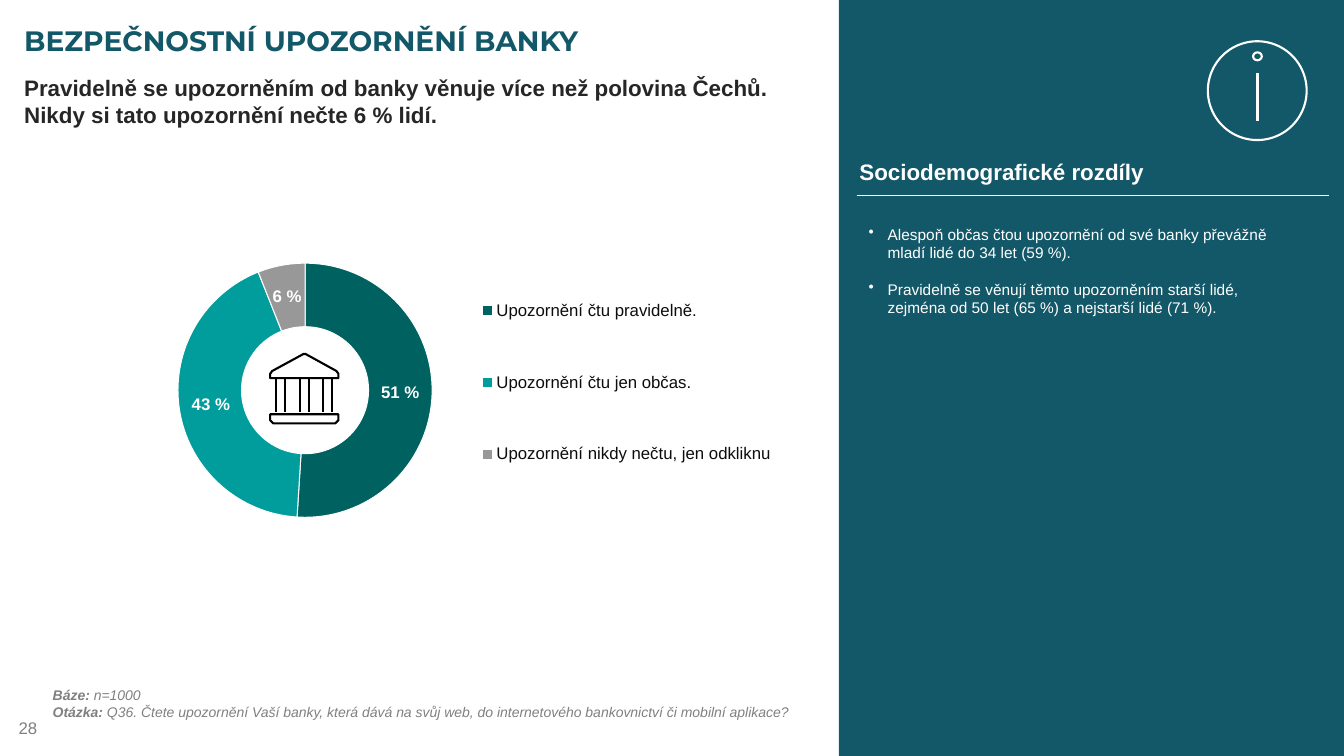
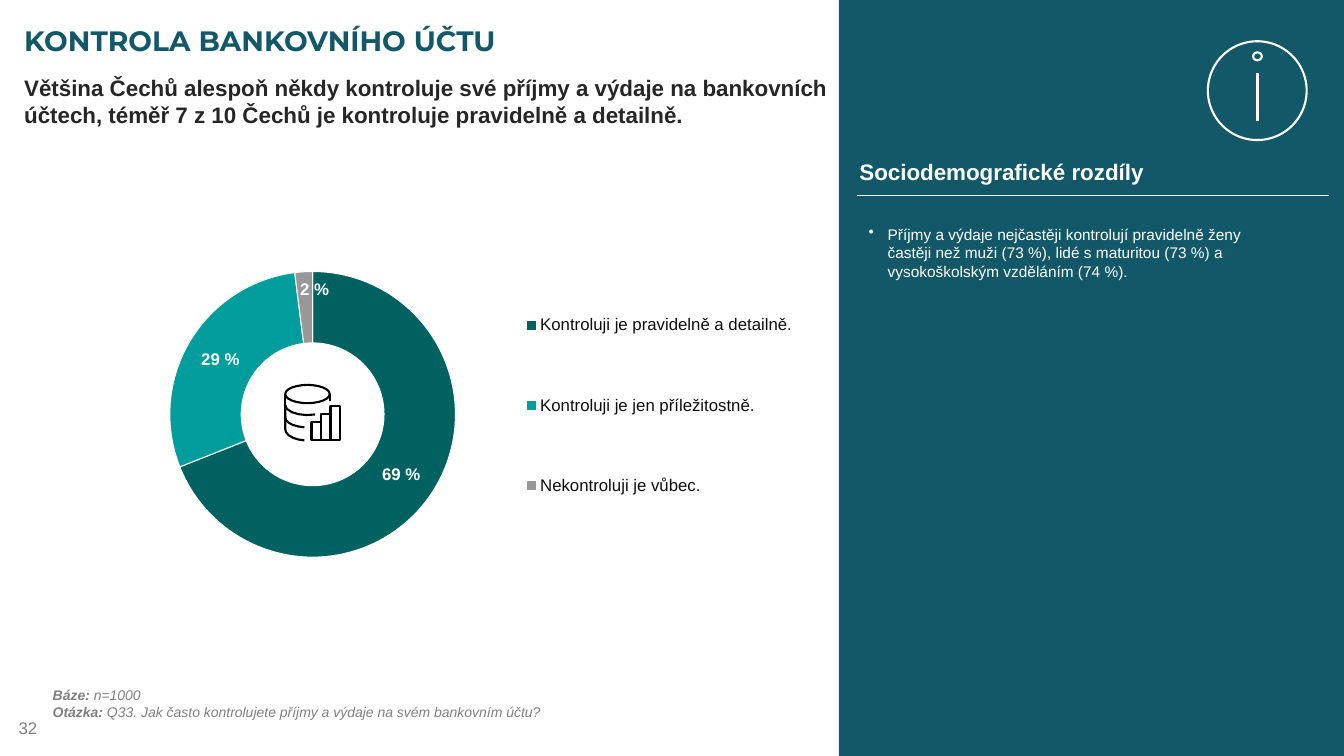
from dataclasses import dataclass
from math import cos, radians, sin
from typing import Callable, NamedTuple

from lxml import etree
from pptx import Presentation
from pptx.chart.data import CategoryChartData
from pptx.dml.color import RGBColor
from pptx.enum import chart as charts, shapes, text
from pptx.oxml import parse_xml
from pptx.oxml.ns import nsdecls, qn
from pptx.util import Cm, Pt

TEAL, WHITE, BLACK = "135868", "FFFFFF", "000000"
INK, LEGEND_INK, GRAY = "262626", "0D0D0D", "808080"
SLICES = ("006260", "009D9C", "7F7F7F")
PERCENT = r'#,##0\ "%";\-#,##0"%"'
ICON_LINE = 1.5
ARC_STEPS = 5


class Box(NamedTuple):
    """Left, top, width and height: centimetres, or shares of a chart."""
    x: float
    y: float
    w: float
    h: float


@dataclass(frozen=True)
class Style:
    size: float
    color: str
    bold: bool | None = None
    italic: bool | None = None
    name: str = "Arial"


TITLE = Style(20, TEAL, bold=True, name="Montserrat")
LEAD = Style(16, INK, bold=True)
HEADING = Style(16, WHITE, bold=True)
BULLET = Style(11, WHITE)
NOTE = Style(10, GRAY, italic=True)
PAGE = Style(12, GRAY)
CHART_LABEL = Style(12, WHITE, bold=True)


@dataclass(frozen=True)
class Survey:
    page: int
    title: str
    lead: str
    question: str
    findings: tuple[str, ...]
    answers: dict[str, int]
    chart: Box
    plot: Box
    legend: Box
    icon: Callable
    last_label_shift: tuple[float, float] | None = None


# Basic drawing
def rgb(color: str) -> RGBColor:
    return RGBColor.from_string(color)


def cm(box: Box) -> list[Cm]:
    return [Cm(v) for v in box]


def set_font(font, style: Style) -> None:
    font.name, font.size = style.name, Pt(style.size)
    font.bold, font.italic = style.bold, style.italic
    font.color.rgb = rgb(style.color)


def outline(sp, color: str) -> None:
    sp.shadow.inherit = False
    sp.fill.background()
    sp.line.color.rgb = rgb(color)
    sp.line.width = Pt(ICON_LINE)


def add_line(parent, x1: float, y1: float, x2: float, y2: float,
             color: str, width: float = ICON_LINE) -> None:
    line = parent.add_connector(shapes.MSO_CONNECTOR.STRAIGHT,
                                Cm(x1), Cm(y1), Cm(x2), Cm(y2))
    line.line.color.rgb = rgb(color)
    line.line.width = Pt(width)
    etree.SubElement(line._element.spPr, qn("a:effectLst"))


def add_outline(parent, kind, box: Box, color: str) -> None:
    outline(parent.add_shape(kind, *cm(box)), color)


def add_path(parent, points: list[tuple[float, float]], close: bool) -> None:
    start, *rest = [(Cm(x), Cm(y)) for x, y in points]
    builder = parent.build_freeform(*start)
    builder.add_line_segments(rest, close=close)
    outline(builder.convert_to_shape(), BLACK)


def add_text(slide, box: Box, lines: tuple[str, ...], style: Style,
             middle: bool = False, wrap: bool = True):
    tf = slide.shapes.add_textbox(*cm(box)).text_frame
    tf.word_wrap = wrap
    if middle:
        tf.vertical_anchor = text.MSO_ANCHOR.MIDDLE
    for i, line in enumerate(lines):
        p = tf.add_paragraph() if i else tf.paragraphs[0]
        p.text = line
        set_font(p.font, style)
    return tf


# Icons
def bank_icon(parent) -> None:
    left, right, top, bottom = 6.81, 8.53, 9.53, 10.39
    add_path(parent, [(right, top), (left, top), (left, 9.42), (6.86, 9.35),
                      (7.65, 8.92), (7.7, 8.92), (8.48, 9.35), (right, 9.42)], True)
    for column in range(3):
        for side in (0, 0.23):
            x = 6.96 + 0.59 * column + side
            add_line(parent, x, top, x, bottom, BLACK)
    add_path(parent, [(left, 10.44), (right, 10.44), (right, 10.59), (8.45, 10.67),
                      (6.89, 10.67), (left, 10.59)], True)


def database_icon(parent) -> None:
    left, radius, base = 7.19, 0.56, 11.1
    for i, height in enumerate((0.46, 0.66, 0.86)):
        bar = Box(7.85 + 0.24 * i, base - height, 0.25, height)
        add_outline(parent, shapes.MSO_SHAPE.RECTANGLE, bar, BLACK)
    add_outline(parent, shapes.MSO_SHAPE.OVAL, Box(left, 9.7, 2 * radius, 0.46), BLACK)
    # Each tier runs down the side, then along an elliptic arc
    for top, y, depth, end in ((10.21, 10.21, 0.25, 70), (10.21, 10.52, 0.25, 98),
                               (10.49, 10.82, 0.28, 98)):
        angles = [radians(180 + (end - 180) * i / ARC_STEPS) for i in range(ARC_STEPS + 1)]
        arc = [(left + radius + radius * cos(a), y + depth * sin(a)) for a in angles]
        add_path(parent, arc if top == y else [(left, top), *arc], False)
    add_line(parent, left, 10.21, left, 9.93, BLACK)
    add_line(parent, left + 2 * radius, 10.11, left + 2 * radius, 9.93, BLACK)


def info_icon(parent) -> None:
    add_outline(parent, shapes.MSO_SHAPE.OVAL, Box(30.44, 1.04, 2.49, 2.49), WHITE)
    add_line(parent, 31.69, 1.85, 31.69, 3.05, WHITE)
    add_outline(parent, shapes.MSO_SHAPE.OVAL, Box(31.58, 1.32, 0.22, 0.2), WHITE)


# Chart
def manual_layout(values: tuple[float, ...], inner: bool = False, edge: bool = True):
    target = '<c:layoutTarget val="inner"/>' if inner else ""
    modes = "".join(f'<c:{k}Mode val="edge"/>' for k in "xy") if edge else ""
    places = "".join(f'<c:{k} val="{v}"/>' for k, v in zip("xywh", values))
    return parse_xml(f'<c:layout {nsdecls("c")}><c:manualLayout>{target}{modes}{places}'
                     '</c:manualLayout></c:layout>')


def move_label(series, index: int, shift: tuple[float, float]) -> None:
    set_font(series.points[index].data_label.font, CHART_LABEL)
    label = next(series._element.iter(qn("c:dLbl")))
    number = etree.Element(qn("c:numFmt"), formatCode=PERCENT, sourceLinked="0")
    label.find(qn("c:idx")).addnext(number)
    number.addprevious(manual_layout(shift, edge=False))


def add_doughnut(slide, survey: Survey) -> None:
    data = CategoryChartData(number_format=PERCENT)
    data.categories = list(survey.answers)
    data.add_series("Series 1", list(survey.answers.values()))
    chart = slide.shapes.add_chart(charts.XL_CHART_TYPE.DOUGHNUT,
                                   *cm(survey.chart), data).chart
    set_font(chart.font, Style(10, BLACK))
    chart.has_title = False
    chart.has_legend = True
    legend = chart.legend
    legend.position = charts.XL_LEGEND_POSITION.RIGHT
    legend.include_in_layout = False
    set_font(legend.font, Style(12, LEGEND_INK))

    plot = chart.plots[0]
    plot.vary_by_categories = True
    series = plot.series[0]
    for i, color in enumerate(SLICES):
        fmt = series.points[i].format
        fmt.fill.solid()
        fmt.fill.fore_color.rgb = rgb(color)
        fmt.line.color.rgb = rgb(WHITE)
        fmt.line.width = Pt(0.75)
    # The last slice is slightly transparent
    *_, last = chart._chartSpace.iter(qn("c:dPt"))
    fill = last.find(f'{qn("c:spPr")}/{qn("a:solidFill")}/{qn("a:srgbClr")}')
    etree.SubElement(fill, qn("a:alpha"), val="80000")

    labels = series.data_labels
    labels.show_value = True
    labels.number_format, labels.number_format_is_linked = PERCENT, False
    set_font(labels.font, CHART_LABEL)
    if survey.last_label_shift:
        move_label(series, len(SLICES) - 1, survey.last_label_shift)

    # Fixed places for the ring and the legend
    area = chart._chartSpace.chart.plotArea
    for holder in (area, legend._element):
        for old in holder.findall(qn("c:layout")):
            holder.remove(old)
    area.insert(0, manual_layout(survey.plot, inner=True))
    legend._element.find(qn("c:legendPos")).addnext(manual_layout(survey.legend))


# Shared parts
def add_header_and_footer(slide, survey: Survey) -> None:
    add_text(slide, Box(0.14, 17.83, 7.9, 1.02), (str(survey.page),), PAGE,
             middle=True).margin_left = Cm(0.33)
    add_text(slide, Box(0.36, 0.34, 33.15, 1.35), (survey.title,), TITLE, middle=True)
    add_text(slide, Box(0.36, 1.75, 20.78, 1.78), (survey.lead,), LEAD)
    tf = add_text(slide, Box(1.33, 17.3, 19.81, 0.86), ("", ""), NOTE)
    tf.margin_left = tf.margin_top = tf.margin_right = tf.margin_bottom = 0
    notes = (("Báze: ", "n=1000"), ("Otázka: ", survey.question))
    for p, (label, value) in zip(tf.paragraphs, notes):
        r = p.add_run()
        r.text, r.font.bold = label, True
        p.add_run().text = value


def add_side_panel(slide, findings: tuple[str, ...]) -> None:
    panel = slide.shapes.add_shape(shapes.MSO_SHAPE.RECTANGLE,
                                   *cm(Box(21.14, 0, 12.73, 19.05)))
    panel.shadow.inherit = False
    panel.fill.solid()
    panel.fill.fore_color.rgb = rgb(TEAL)
    panel.line.fill.background()
    add_line(slide.shapes, 21.59, 4.93, 33.5, 4.93, WHITE, 0.5)
    add_text(slide, Box(21.41, 3.86, 7.77, 0.94), ("Sociodemografické rozdíly",),
             HEADING, wrap=False)
    tf = add_text(slide, Box(21.64, 5.54, 10.59, 2.62), findings, BULLET)
    for i, p in enumerate(tf.paragraphs):
        # The bullet takes its size from the run
        p.runs[0].font.size = Pt(BULLET.size)
        if i:
            p.space_before = Pt(13)
        pPr = p._p.get_or_add_pPr()
        pPr.set("marL", str(Cm(0.48)))
        pPr.set("indent", str(-Cm(0.48)))
        bullet = parse_xml(f'<a:buChar {nsdecls("a")} char="•"/>')
        pPr.find(qn("a:defRPr")).addprevious(bullet)
    info_icon(slide.shapes.add_group_shape().shapes)


SURVEYS = (
    Survey(28, "BEZPEČNOSTNÍ UPOZORNĚNÍ BANKY",
           "Pravidelně se upozorněním od banky věnuje více než polovina Čechů. "
           "Nikdy si tato upozornění nečte 6 % lidí.",
           "Q36. Čtete upozornění Vaší banky, která dává na svůj web, "
           "do internetového bankovnictví či mobilní aplikace?",
           ("Alespoň občas čtou upozornění od své banky převážně mladí lidé "
            "do 34 let (59 %).",
            "Pravidelně se věnují těmto upozorněním starší lidé, zejména od 50 let "
            "(65 %) a nejstarší lidé (71 %)."),
           {"Upozornění čtu pravidelně.": 51, "Upozornění čtu jen občas.": 43,
            "Upozornění nikdy nečtu, jen odkliknu": 6},
           Box(1.91, 4.93, 18.64, 10.01), Box(0.1, 0.17, 0.42, 0.64),
           Box(0.53, 0.13, 0.43, 0.68), bank_icon),
    Survey(32, "KONTROLA BANKOVNÍHO ÚČTU",
           "Většina Čechů alespoň někdy kontroluje své příjmy a výdaje na bankovních "
           "účtech, téměř 7 z 10 Čechů je kontroluje pravidelně a detailně.",
           "Q33. Jak často kontrolujete příjmy a výdaje na svém bankovním účtu?",
           ("Příjmy a výdaje nejčastěji kontrolují pravidelně ženy častěji než muži "
            "(73 %), lidé s maturitou (73 %) a vysokoškolským vzděláním (74 %).",),
           {"Kontroluji je pravidelně a detailně.": 69,
            "Kontroluji je jen příležitostně.": 29, "Nekontroluji je vůbec.": 2},
           Box(0.69, 4.93, 22.12, 11.25), Box(0.11, 0.17, 0.43, 0.64),
           Box(0.55, 0.13, 0.34, 0.68), database_icon, (0.01, -0.04)),
)


def main() -> None:
    prs = Presentation()
    prs.slide_width, prs.slide_height = Cm(33.87), Cm(19.05)
    for survey in SURVEYS:
        slide = prs.slides.add_slide(prs.slide_layouts[6])
        add_header_and_footer(slide, survey)
        add_doughnut(slide, survey)
        survey.icon(slide.shapes.add_group_shape().shapes)
        add_side_panel(slide, survey.findings)
    prs.save("out.pptx")


if __name__ == "__main__":
    main()
